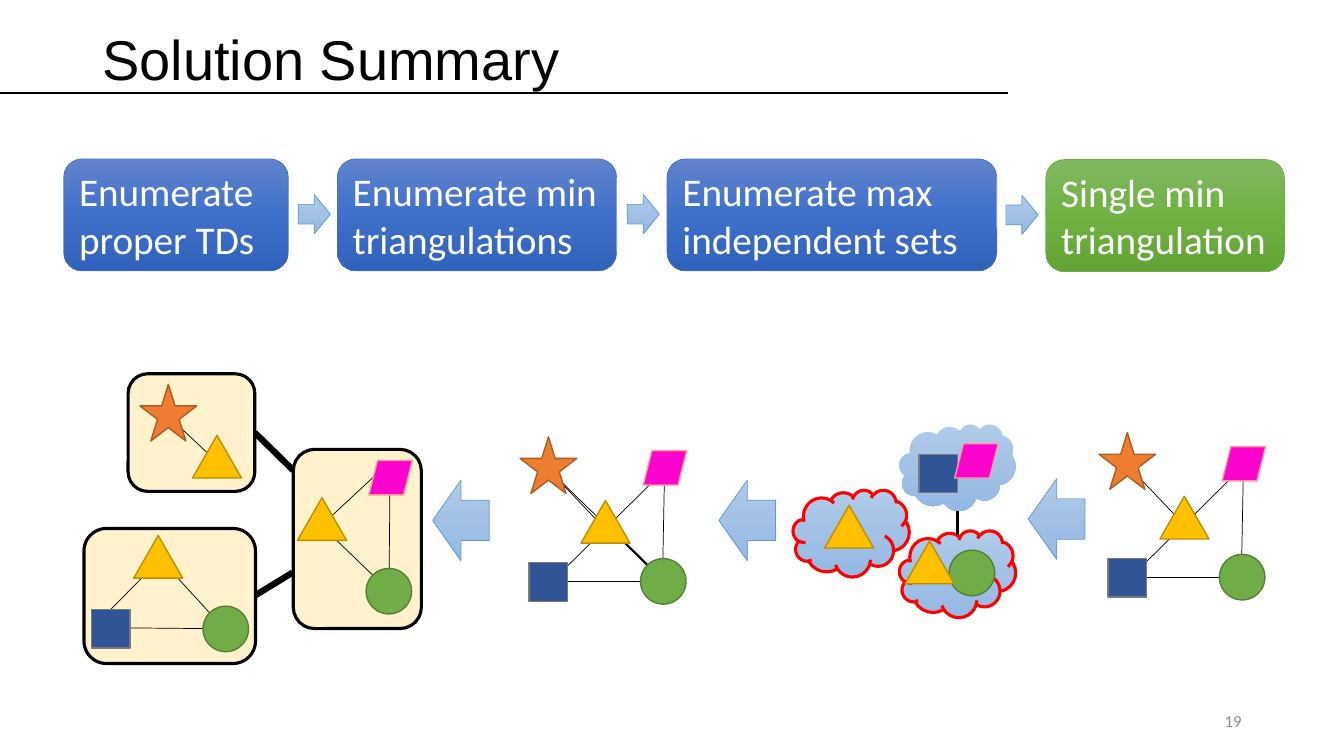
import copy

import pptx
import pptx.dml.color
import pptx.enum.shapes
import pptx.enum.text
import pptx.oxml.ns
import pptx.util

Pt = pptx.util.Pt
RGB = pptx.dml.color.RGBColor
MSO = pptx.enum.shapes.MSO_SHAPE
ANCHOR = pptx.enum.text.MSO_ANCHOR
ALIGN = pptx.enum.text.PP_ALIGN
qn = pptx.oxml.ns.qn

BLACK = RGB(0x00, 0x00, 0x00)
WHITE = RGB(0xFF, 0xFF, 0xFF)
GRAY = RGB(0x8C, 0x8C, 0x8C)
RED = RGB(0xFF, 0x00, 0x00)
CREAM = RGB(0xFF, 0xF2, 0xCC)
BLUE_LINE = RGB(0x44, 0x72, 0xC4)
GREEN = RGB(0x70, 0xAD, 0x47)
GREEN_LINE = RGB(0x53, 0x80, 0x35)
SKY_LINE = RGB(0x5B, 0x9B, 0xD5)
NAVY = RGB(0x2F, 0x55, 0x97)
NAVY_LINE = RGB(0x7A, 0x7A, 0x7A)
PINK = RGB(0xFC, 0x04, 0xCD)
PINK_LINE = RGB(0xFF, 0x99, 0x99)
GOLD = RGB(0xFF, 0xC0, 0x00)
GOLD_LINE = RGB(0xBD, 0x8E, 0x00)
ORANGE = RGB(0xED, 0x7D, 0x31)
ORANGE_LINE = RGB(0xAF, 0x5C, 0x24)
BLUE_GRAD = (RGB(0x61, 0x83, 0xCB), RGB(0x3E, 0x70, 0xCA), RGB(0x30, 0x62, 0xBB))
GREEN_GRAD = (RGB(0x81, 0xB8, 0x61), RGB(0x6F, 0xB2, 0x42), RGB(0x62, 0xA3, 0x36))
SKY_GRAD = (RGB(0xB1, 0xCB, 0xE9), RGB(0xA3, 0xC1, 0xE5), RGB(0x93, 0xB9, 0xE4))

NODES = {
    "circle": (MSO.OVAL, 32.5, 32.5, GREEN, GREEN_LINE),
    "square": (MSO.RECTANGLE, 27.5, 27.5, NAVY, NAVY_LINE),
    "slant": (MSO.FLOWCHART_DATA, 31, 24.5, PINK, PINK_LINE),
    "triangle": (MSO.ISOSCELES_TRIANGLE, 35, 30.5, GOLD, GOLD_LINE),
    "star": (MSO.STAR_5_POINT, 40.5, 40.5, ORANGE, ORANGE_LINE),
}


def add_gradient(s, colors):
    s.fill.gradient()
    s.fill.gradient_angle = 270
    stops = s._element.spPr.find(qn("a:gradFill")).find(qn("a:gsLst"))
    stops.insert(1, copy.deepcopy(stops[0]))
    for stop, color, position in zip(s.fill.gradient_stops, colors, (0, 0.5, 1)):
        stop.color.rgb = color
        stop.position = position


def add_shape(sl, kind, x, y, w, h, fill, line=None, weight=1):
    s = sl.shapes.add_shape(kind, Pt(x), Pt(y), Pt(w), Pt(h))
    s.shadow.inherit = False
    if isinstance(fill, RGB):
        s.fill.solid()
        s.fill.fore_color.rgb = fill
    else:
        add_gradient(s, fill)
    if line is None:
        s.line.fill.background()
    else:
        s.line.color.rgb = line
        s.line.width = Pt(weight)
    return s


def add_line(sl, x1, y1, x2, y2, weight=0.5):
    s = sl.shapes.add_connector(
        pptx.enum.shapes.MSO_CONNECTOR.STRAIGHT, Pt(x1), Pt(y1), Pt(x2), Pt(y2))
    s.line.color.rgb = BLACK
    s.line.width = Pt(weight)
    s._element.spPr.append(pptx.oxml.parse_xml(
        f'<a:effectLst {pptx.oxml.ns.nsdecls("a")}/>'))


def add_text(s, text, size, color, font="Calibri", align=ALIGN.LEFT, spacing=1.0):
    tf = s.text_frame
    tf.word_wrap = True
    tf.vertical_anchor = ANCHOR.MIDDLE
    p = tf.paragraphs[0]
    p.alignment = align
    p.line_spacing = spacing
    r = p.add_run()
    r.text = text
    r.font.size = Pt(size)
    r.font.name = font
    r.font.color.rgb = color


def add_step(sl, x, y, w, text, fill, line):
    s = add_shape(sl, MSO.ROUNDED_RECTANGLE, x, y, w, 80, fill, line, 0.5)
    add_text(s, text, 28, WHITE)


def add_node(sl, name, x, y):
    kind, w, h, fill, line = NODES[name]
    add_shape(sl, kind, x, y, w, h, fill, line)


def add_bag(sl, x, y, w, h, edges, nodes):
    add_shape(sl, MSO.ROUNDED_RECTANGLE, x, y, w, h, CREAM, BLACK, 2.25)
    for edge in edges:
        add_line(sl, *edge)
    for node in nodes:
        add_node(sl, *node)


def add_graph(sl, x, y, chord=False):
    edges = [(104, 23, 21, 105), (86, 103.5, 34, 103.5),
             (61, 66, 20, 23), (103, 34.5, 102, 87)]
    if chord:
        edges += [(91.5, 92.5, 20, 23), (93, 93.5, 65, 66, 1.5)]
    for x1, y1, x2, y2, *weight in edges:
        add_line(sl, x + x1, y + y1, x + x2, y + y2, *weight)
    for name, dx, dy in (("circle", 86, 87), ("square", 6.5, 90), ("slant", 88, 10),
                         ("triangle", 43.5, 45.5), ("star", 0, 0)):
        add_node(sl, name, x + dx, y + dy)


def add_tree_decomposition(sl):
    add_line(sl, 209.5, 336, 182, 309, 4.5)
    add_line(sl, 209, 409, 182, 425.5, 4.5)
    add_bag(sl, 60, 377.5, 122.5, 96.5,
            [(145, 449, 92, 448.5), (150, 438, 117, 402), (112, 402, 79, 435.5)],
            [("circle", 145, 433), ("square", 65.5, 435.5), ("triangle", 95.5, 382.5)])
    add_bag(sl, 209.5, 321, 91.5, 128,
            [(266.5, 411, 230, 376), (278.5, 353.5, 278, 406), (266.5, 341, 230, 375)],
            [("circle", 261.5, 406), ("slant", 263.5, 329), ("triangle", 212.5, 355.5)])
    add_bag(sl, 91.5, 267, 90.5, 84, [(155, 330, 120, 297)],
            [("triangle", 137.5, 311), ("star", 100, 274.5)])


def add_separator_graph(sl):
    for x, y, line, nodes in (
            (566.5, 350, RED, [("triangle", 589, 361)]),
            (642.5, 379, RED, [("circle", 678, 393), ("triangle", 646.5, 386.5)]),
            (642.5, 303, None, [("square", 656.5, 324.5), ("slant", 682, 317)])):
        add_shape(sl, MSO.CLOUD, x, y, 83, 62, SKY_GRAD, line, 2.25)
        for node in nodes:
            add_node(sl, *node)
    add_line(sl, 684, 365, 684, 382, 2.25)


def main():
    prs = pptx.Presentation()
    prs.slide_width, prs.slide_height = Pt(960), Pt(540)
    sl = prs.slides.add_slide(prs.slide_layouts[6])

    add_line(sl, 0, 66.5, 720, 66.5, 1)
    title = sl.shapes.add_textbox(Pt(66), Pt(11.5), Pt(828), Pt(66))
    add_text(title, "Solution Summary", 40, BLACK, "Arial", spacing=0.9)

    for x, y, w, text, fill, line in (
            (45.5, 113.5, 160.5, "Enumerate proper TDs", BLUE_GRAD, BLUE_LINE),
            (241, 113.5, 199.5, "Enumerate min triangulations", BLUE_GRAD, BLUE_LINE),
            (476.5, 113.5, 235.5, "Enumerate max independent sets", BLUE_GRAD, BLUE_LINE),
            (747, 114, 170.5, "Single min triangulation", GREEN_GRAD, GREEN)):
        add_step(sl, x, y, w, text, fill, line)
    for x, y in ((213, 139), (448, 139), (718.5, 139.5)):
        add_shape(sl, MSO.RIGHT_ARROW, x, y, 23, 28, SKY_GRAD, SKY_LINE, 0.5)
    for x, y in ((309, 343), (513.5, 343), (734.5, 342)):
        add_shape(sl, MSO.LEFT_ARROW, x, y, 40.5, 57.5, SKY_GRAD, SKY_LINE, 0.5)

    add_tree_decomposition(sl)
    add_graph(sl, 371.5, 312, chord=True)
    add_separator_graph(sl)
    add_graph(sl, 785, 309)

    number = sl.shapes.add_textbox(Pt(678), Pt(500.5), Pt(216), Pt(29))
    add_text(number, "19", 12, GRAY, align=ALIGN.RIGHT)
    prs.save("out.pptx")


if __name__ == "__main__":
    main()
